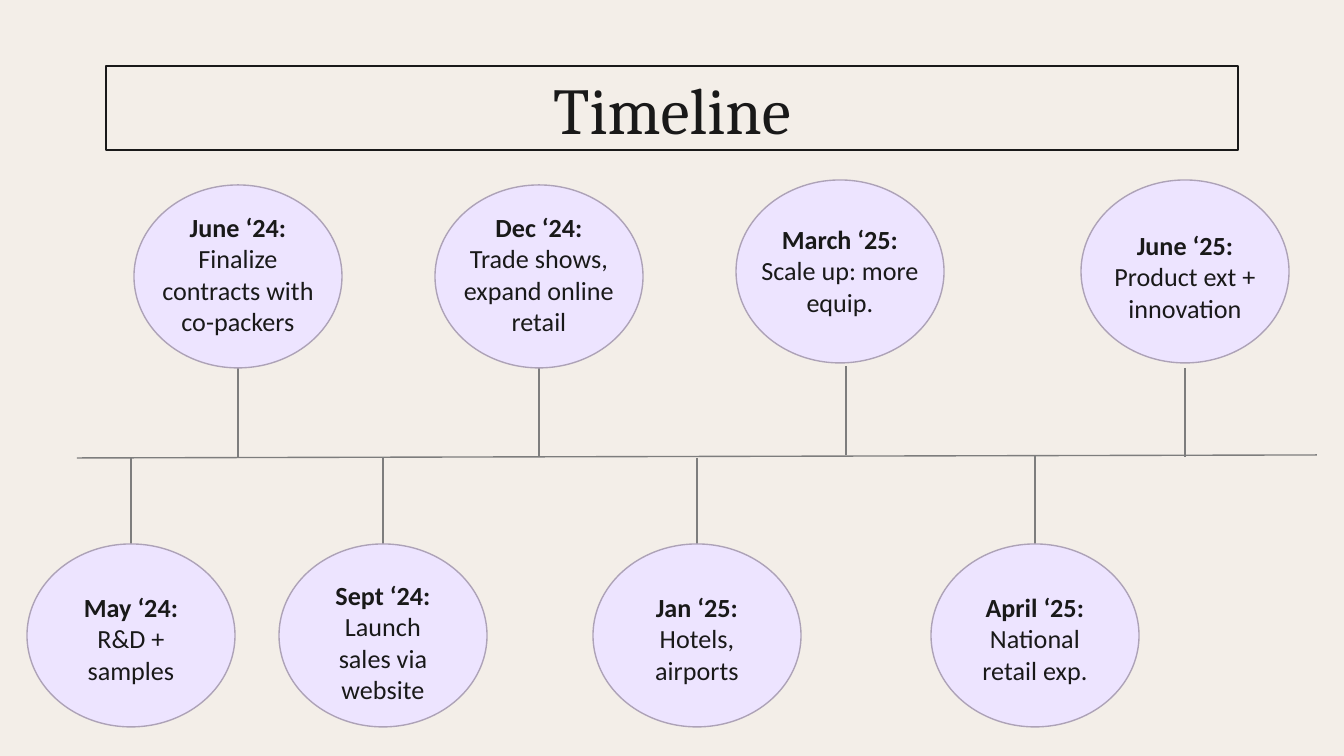
from typing import NamedTuple

from pptx import Presentation
from pptx.dml.color import RGBColor
from pptx.enum.shapes import MSO_CONNECTOR, MSO_SHAPE
from pptx.enum.text import MSO_ANCHOR, PP_ALIGN
from pptx.oxml.ns import qn
from pptx.util import Emu, Pt
from lxml.etree import SubElement

EMU_PER_PX = 914400 / 134.4
OVAL_WIDTH, OVAL_HEIGHT = 208, 183
STEM_LENGTH = 89
INK = "191919"
LINE_GRAY = "7D7D7D"


class Milestone(NamedTuple):
    date: str
    detail: str
    center: int
    oval_top: int
    text_top: int
    text_width: int
    text_height: int
    stem_x: int
    stem_top: int


MILESTONES = [
    Milestone("May ‘24:", "R&D + samples", 131, 544, 578, 144, 116, 131, 458),
    Milestone("June ‘24:", "Finalize contracts with co-packers", 238, 185, 198, 208, 125, 238, 368),
    Milestone("Sept ‘24:", "Launch sales via website", 383, 544, 566, 136, 116, 383, 458),
    Milestone("Dec ‘24:", "Trade shows, expand online retail", 539, 185, 198, 194, 116, 539, 368),
    Milestone("Jan ‘25:", "Hotels, airports", 697, 544, 578, 136, 116, 697, 458),
    Milestone("March ‘25:", "Scale up: more equip.", 840, 180, 210, 186, 93, 846, 366),
    Milestone("April ‘25:", "National retail exp.", 1035, 544, 578, 162, 116, 1035, 456),
    Milestone("June ‘25:", "Product ext + innovation", 1185, 180, 216, 186, 116, 1185, 368),
]


def px(value):
    return Emu(round(value * EMU_PER_PX))


def color(hex_value):
    return RGBColor.from_string(hex_value)


def set_line(line, hex_value):
    line.color.rgb = color(hex_value)
    line.width = Pt(0.75)


def set_margins(frame):
    frame.word_wrap = True
    frame.margin_left = frame.margin_right = Pt(7.2)
    frame.margin_top = frame.margin_bottom = Pt(7.2)


def add_run(paragraph, text, font_name, size, bold=False):
    paragraph.alignment = PP_ALIGN.CENTER
    run = paragraph.add_run()
    run.text = text
    run.font.name = font_name
    run.font.size = Pt(size)
    run.font.bold = bold
    run.font.color.rgb = color(INK)


def fill_title(slide, text):
    title = slide.shapes.title
    title.left, title.top, title.width, title.height = map(px, (106, 66, 1132, 84))
    set_line(title.line, INK)
    frame = title.text_frame
    set_margins(frame)
    frame.vertical_anchor = MSO_ANCHOR.MIDDLE
    add_run(frame.paragraphs[0], text, "Cambria", 35)


def add_line(slide, *ends):
    connector = slide.shapes.add_connector(MSO_CONNECTOR.STRAIGHT, *map(px, ends))
    set_line(connector.line, LINE_GRAY)
    properties = connector._element.find(qn("p:spPr"))
    SubElement(properties, qn("a:effectLst"))


def add_oval(slide, milestone):
    left = milestone.center - OVAL_WIDTH // 2
    bounds = map(px, (left, milestone.oval_top, OVAL_WIDTH, OVAL_HEIGHT))
    oval = slide.shapes.add_shape(MSO_SHAPE.OVAL, *bounds)
    oval.shadow.inherit = False
    oval.fill.solid()
    oval.fill.fore_color.rgb = color("EDE4FF")
    set_line(oval.line, "ADA2B7")


def add_label(slide, milestone):
    left = milestone.center - milestone.text_width // 2
    bounds = (left, milestone.text_top, milestone.text_width, milestone.text_height)
    frame = slide.shapes.add_textbox(*map(px, bounds)).text_frame
    set_margins(frame)
    add_run(frame.paragraphs[0], milestone.date, "Calibri", 14, bold=True)
    add_run(frame.add_paragraph(), milestone.detail, "Calibri", 14)


def main():
    presentation = Presentation()
    presentation.slide_width = px(1344)
    presentation.slide_height = px(756)
    slide = presentation.slides.add_slide(presentation.slide_layouts[5])
    background = slide.background.fill
    background.solid()
    background.fore_color.rgb = color("F3EEE8")

    fill_title(slide, "Timeline")
    add_line(slide, 77, 458, 1317, 455)
    for milestone in MILESTONES:
        stem_bottom = milestone.stem_top + STEM_LENGTH
        add_line(slide, milestone.stem_x, milestone.stem_top, milestone.stem_x, stem_bottom)
    for milestone in MILESTONES:
        add_oval(slide, milestone)
        add_label(slide, milestone)
    presentation.save("out.pptx")


if __name__ == "__main__":
    main()
